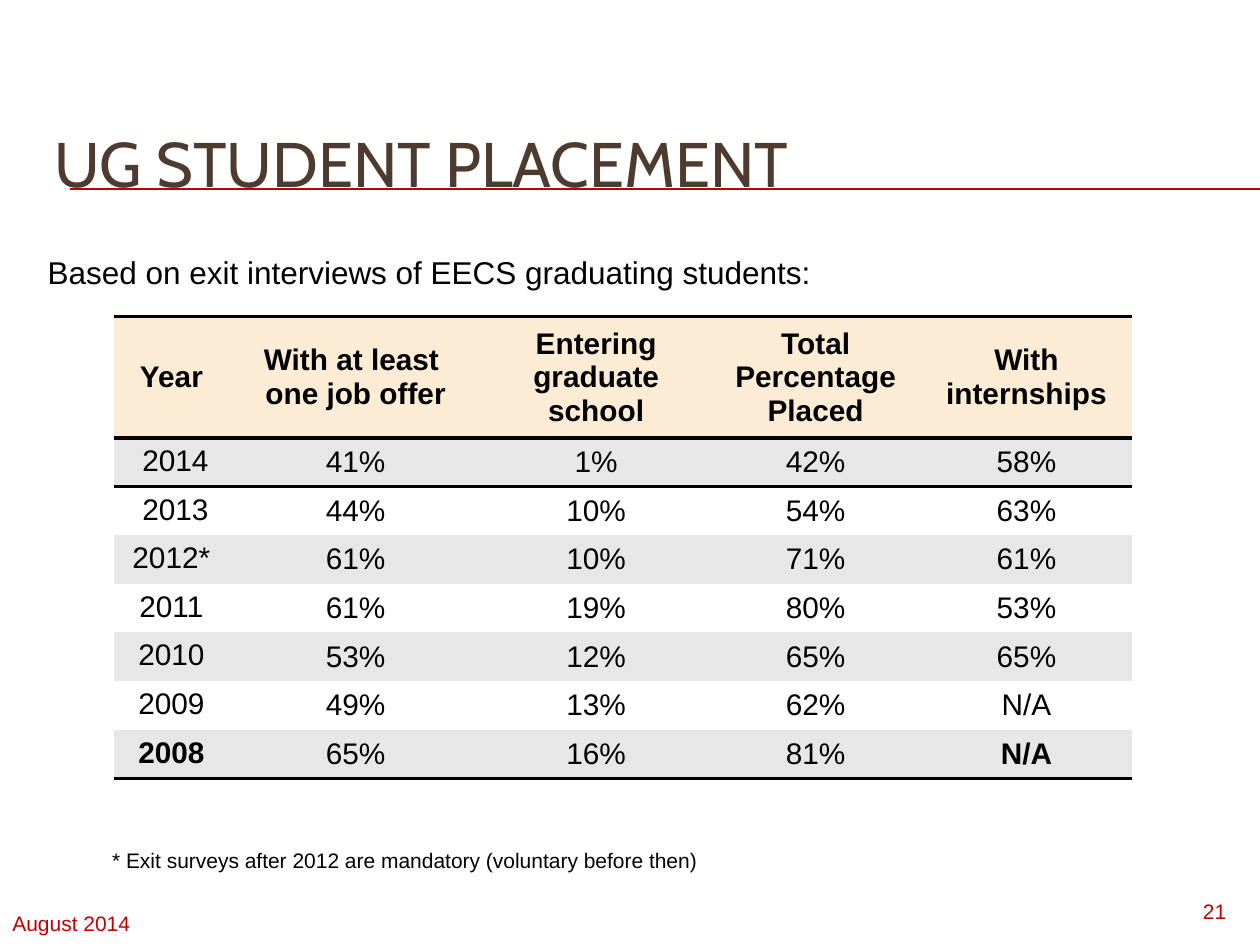
from dataclasses import dataclass

from lxml import etree
from pptx import Presentation
from pptx import util as u
from pptx.dml.color import RGBColor
from pptx.enum import shapes, text
from pptx.oxml.ns import qn

BLACK, RED, BROWN = "000000", "C00000", "4E3B30"
CREAM, GREY, WHITE = "FCECD5", "E7E7E7", "FFFFFF"
PLAIN_TABLE_STYLE = "{2D5ABB26-0587-4C30-8999-92F81FD0307C}"
CENTER, RIGHT = text.PP_ALIGN.CENTER, text.PP_ALIGN.RIGHT
TOP, MIDDLE = text.MSO_ANCHOR.TOP, text.MSO_ANCHOR.MIDDLE

HEADINGS = ["Year", "With at least \none job offer", "Entering graduate school",
            "Total Percentage Placed", "With internships"]
PLACEMENTS = [
    [" 2014", "41%", "1%", "42%", "58%"],
    [" 2013", "44%", "10%", "54%", "63%"],
    ["2012*", "61%", "10%", "71%", "61%"],
    ["2011", "61%", "19%", "80%", "53%"],
    ["2010", "53%", "12%", "65%", "65%"],
    ["2009", "49%", "13%", "62%", "N/A"],
    ["2008", "65%", "16%", "81%", "N/A"],
]
COLUMN_WIDTHS = [2.33, 5.1, 4.6, 4.25, 4.25]
HEADER_HEIGHT, ROW_HEIGHT = 2.45, 0.98


@dataclass
class Label:
    """A text box, with its place and size in centimetres."""
    content: str
    left: float
    top: float
    width: float
    height: float
    size: float = 12
    color: str = BLACK
    align: text.PP_ALIGN = text.PP_ALIGN.LEFT
    wrap: bool = True


LABELS = [
    Label("21", 22.86, 17.98, 2.11, 0.69, color=RED, align=RIGHT),
    Label("Based on exit interviews of EECS graduating students:",
          0.71, 4.98, 16.05, 1.02, size=18, wrap=False),
    Label("* Exit surveys after 2012 are mandatory (voluntary before then)",
          2.01, 16.97, 21.31, 0.76),
    Label("August 2014", 0, 18.24, 6.99, 0.81, color=RED),
]


def rgb(color: str) -> RGBColor:
    return RGBColor.from_string(color)


def write(frame, content: str, *, size: float, color: str = BLACK, font: str = "Arial",
          bold: bool = False, align: text.PP_ALIGN = text.PP_ALIGN.LEFT) -> None:
    frame.text = content
    for paragraph in frame.paragraphs:
        paragraph.alignment = align
        paragraph.font.name = font
        paragraph.font.size = u.Pt(size)
        paragraph.font.bold = bold
        paragraph.font.color.rgb = rgb(color)


def add_title(slide, content: str) -> None:
    title = slide.shapes.title
    title.left, title.top = u.Cm(0.84), u.Cm(2.11)
    title.width, title.height = u.Cm(24.13), u.Cm(2.34)
    title.text_frame.vertical_anchor = MIDDLE
    write(title.text_frame, content, size=36, color=BROWN, font="Cabin")


def add_rule(slide) -> None:
    """Draw the red line behind the title."""
    rule = slide.shapes.add_connector(shapes.MSO_CONNECTOR.STRAIGHT,
                                      u.Cm(1.42), u.Cm(3.81), u.Cm(25.4), u.Cm(3.81))
    rule.line.color.rgb = rgb(RED)
    rule.line.width = u.Pt(0.75)
    etree.SubElement(rule.element.spPr, qn("a:effectLst"))
    slide.shapes.title.element.addprevious(rule.element)


def add_label(slide, label: Label) -> None:
    box = slide.shapes.add_textbox(u.Cm(label.left), u.Cm(label.top),
                                   u.Cm(label.width), u.Cm(label.height))
    box.text_frame.word_wrap = label.wrap
    write(box.text_frame, label.content, size=label.size, color=label.color,
          align=label.align)


def set_borders(cell, *sides: str) -> None:
    """Put 2 pt black lines on the given sides, named in schema order."""
    properties = cell._tc.get_or_add_tcPr()
    for index, side in enumerate(sides):
        border = etree.Element(qn(f"a:ln{side}"), w=str(u.Pt(2)))
        fill = etree.SubElement(border, qn("a:solidFill"))
        etree.SubElement(fill, qn("a:srgbClr"), val=BLACK)
        properties.insert(index, border)


def add_placement_table(slide) -> None:
    rows = [HEADINGS, *PLACEMENTS]
    last = len(rows) - 1
    frame = slide.shapes.add_table(
        len(rows), len(HEADINGS), u.Cm(2.29), u.Cm(6.38),
        u.Cm(sum(COLUMN_WIDTHS)), u.Cm(HEADER_HEIGHT + last * ROW_HEIGHT))
    table = frame.table
    table._tbl.tblPr.find(qn("a:tableStyleId")).text = PLAIN_TABLE_STYLE
    for column, width in zip(table.columns, COLUMN_WIDTHS):
        column.width = u.Cm(width)
    for number, values in enumerate(rows):
        is_header = number == 0
        table.rows[number].height = u.Cm(HEADER_HEIGHT if is_header else ROW_HEIGHT)
        color = CREAM if is_header else GREY if number % 2 else WHITE
        for position, value in enumerate(values):
            cell = table.cell(number, position)
            cell.fill.solid()
            cell.fill.fore_color.rgb = rgb(color)
            cell.vertical_anchor = MIDDLE if is_header or position else TOP
            bold = is_header or (number == last and value in ("2008", "N/A"))
            write(cell.text_frame, value, size=17, bold=bold, align=CENTER)
            if is_header:
                set_borders(cell, "T", "B")
            elif number == 1:
                set_borders(cell, "T")
            elif number == last:
                set_borders(cell, "B")


def main() -> None:
    presentation = Presentation()
    presentation.slide_width, presentation.slide_height = u.Cm(25.4), u.Cm(19.05)
    slide = presentation.slides.add_slide(presentation.slide_layouts[5])
    slide.background.fill.solid()
    slide.background.fill.fore_color.rgb = rgb(WHITE)
    add_title(slide, "UG STUDENT PLACEMENT")
    add_rule(slide)
    add_placement_table(slide)
    for label in LABELS:
        add_label(slide, label)
    presentation.save("out.pptx")


if __name__ == "__main__":
    main()
